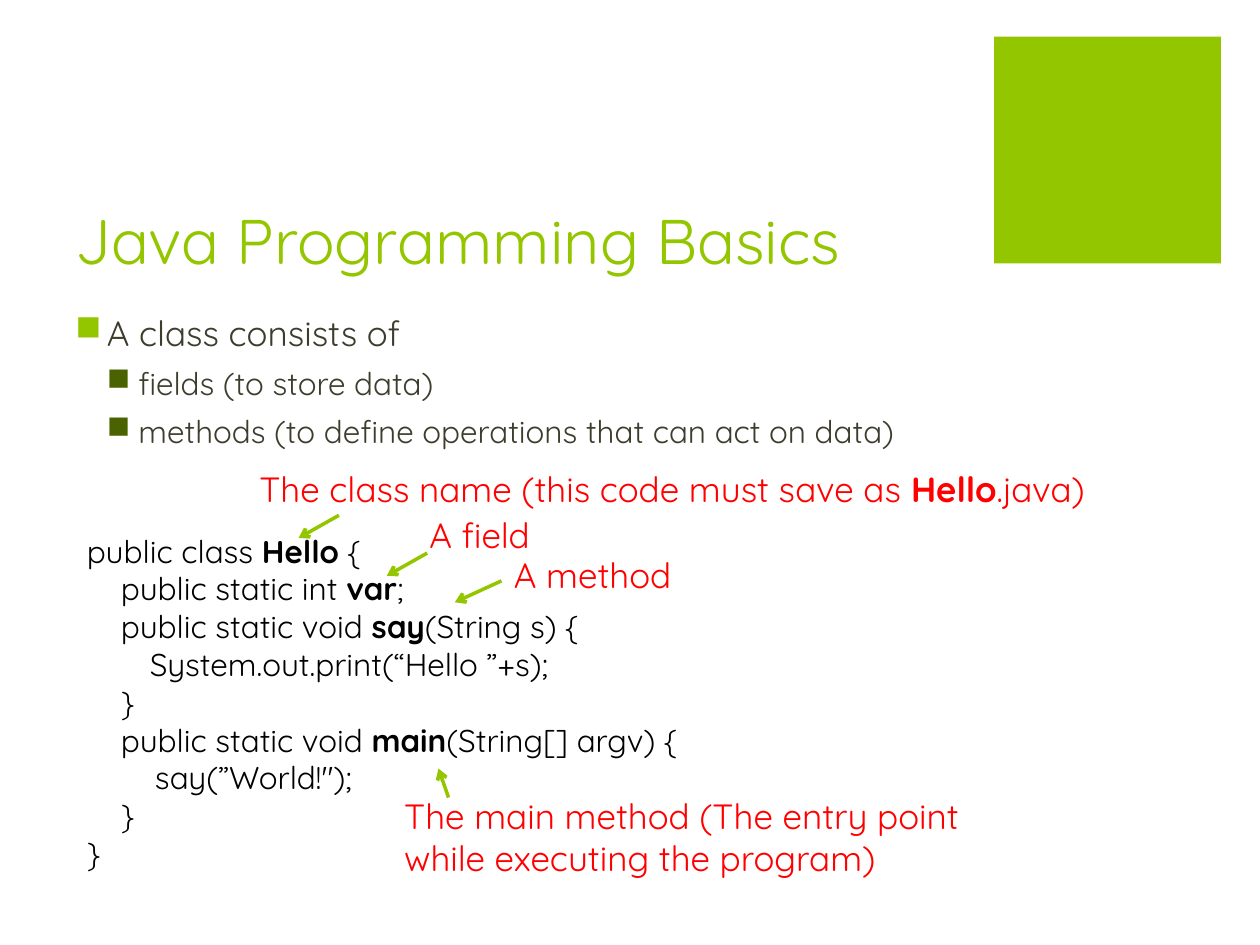
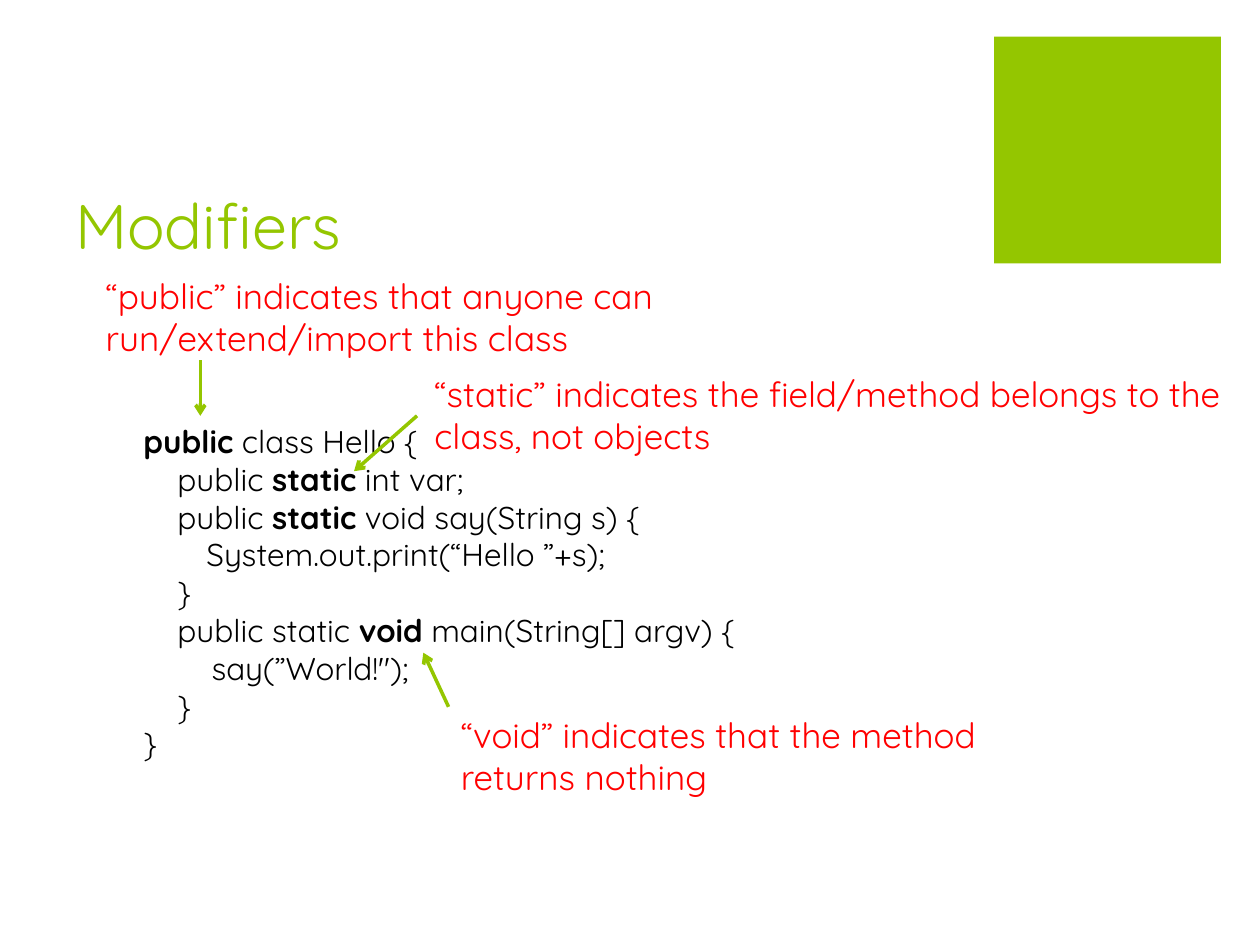
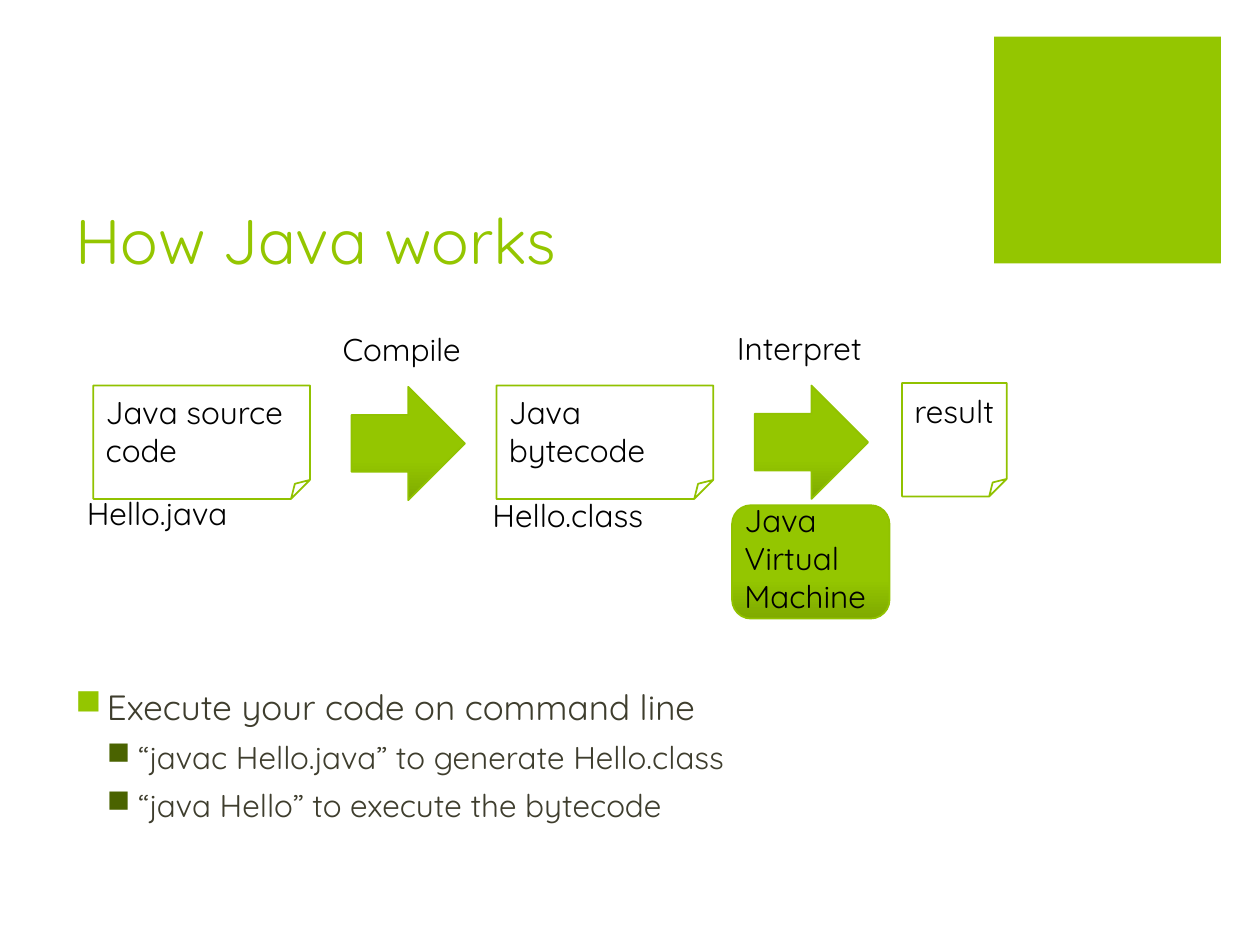
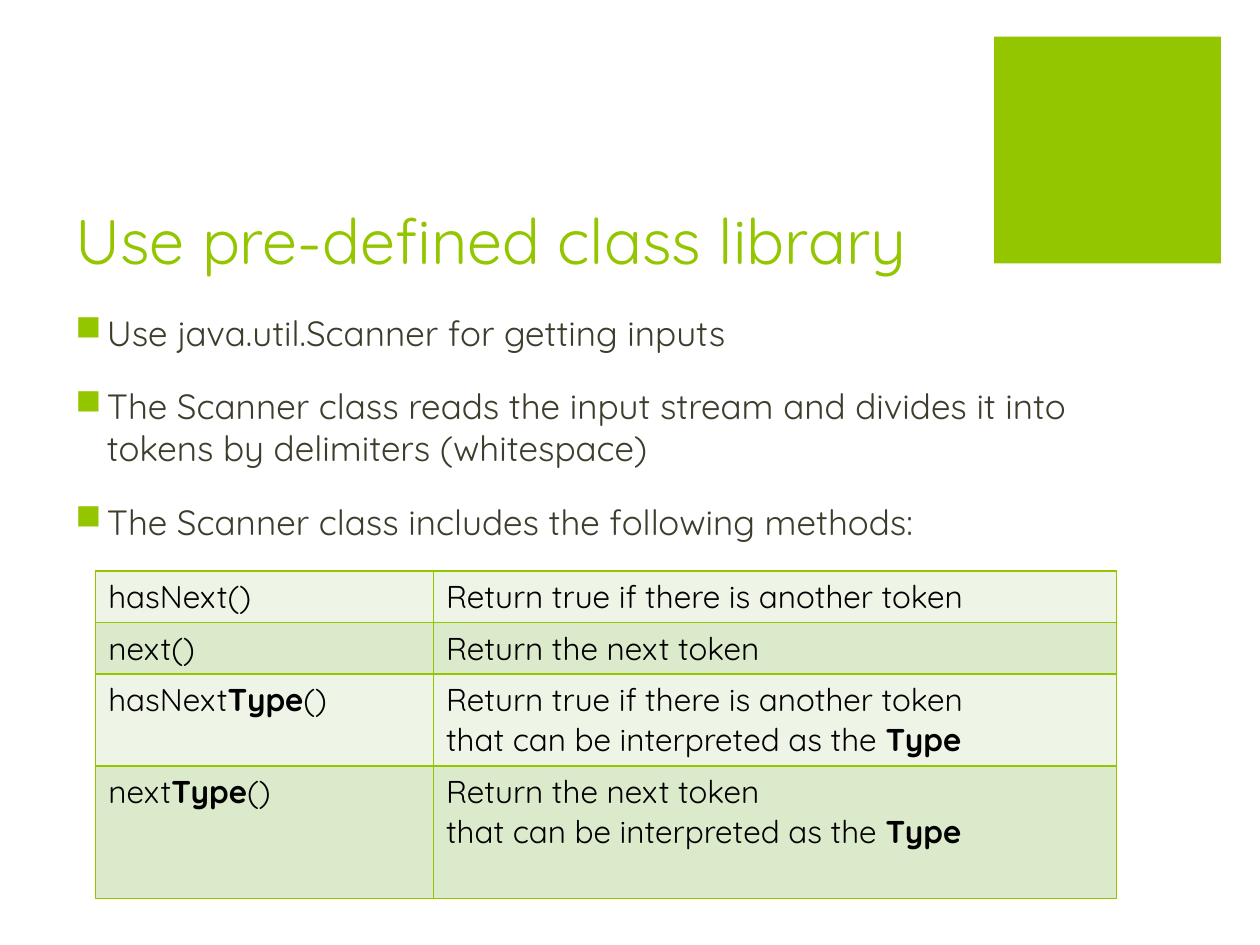
from dataclasses import dataclass

from lxml.etree import SubElement
from pptx import Presentation
from pptx.dml.color import RGBColor
from pptx.enum.shapes import MSO_CONNECTOR, MSO_SHAPE as Preset
from pptx.enum.text import MSO_ANCHOR as Anchor, MSO_AUTO_SIZE as AutoSize
from pptx.oxml.ns import qn
from pptx.util import Pt

PX = 9144  # EMU per px, 100 px to the inch
FONT = "Quicksand"
TITLE_SIZE, LARGE, NORMAL = 36, 20, 18

GREEN = RGBColor(0x94, 0xC6, 0x00)
EDGE_GREEN = RGBColor(0x91, 0xC2, 0x00)
SHADE_GREEN = RGBColor(0x7F, 0xAA, 0x00)
DARK_GREEN = RGBColor(0x4A, 0x63, 0x00)
BODY_GRAY = RGBColor(0x3E, 0x3D, 0x2D)
BLACK = RGBColor(0x00, 0x00, 0x00)
RED = RGBColor(0xFF, 0x00, 0x00)
ROW_FILLS = (RGBColor(0xEE, 0xF5, 0xE7), RGBColor(0xDC, 0xEA, 0xCC))


# Descriptions of the repeated elements
@dataclass(frozen=True)
class Box:
    left: int
    top: int
    width: int
    height: int

    def emu(self) -> tuple:
        return tuple(n * PX for n in (self.left, self.top, self.width, self.height))


@dataclass(frozen=True)
class Line:
    text: str
    bold: str = ""  # the word shown in bold
    indent: int = 0


@dataclass(frozen=True)
class BulletStyle:
    indent: int
    space_before: int
    size: int
    color: RGBColor


@dataclass(frozen=True)
class Bullet:
    text: str
    level: int = 0


@dataclass(frozen=True)
class Callout:
    text: str
    box: Box
    start: tuple
    end: tuple
    bold: str = ""


@dataclass(frozen=True)
class Figure:
    preset: Preset
    box: Box


SQUARE = Box(789, 29, 180, 180)
TITLE = Box(50, 100, 712, 125)
BULLET_STYLES = (BulletStyle(25, 18, LARGE, GREEN), BulletStyle(50, 6, NORMAL, DARK_GREEN))
HANGING = 25

CODE = (
    Line("public class Hello {"),
    Line("public static int var;", indent=27),
    Line("public static void say(String s) {", indent=27),
    Line("System.out.print(“Hello ”+s);", indent=50),
    Line("}", indent=27),
    Line("public static void main(String[] argv) {", indent=27),
    Line("say(”World!\");", indent=54),
    Line("}", indent=27),
    Line("}"),
)


# Text helpers
def set_font(paragraph, size: int, color: RGBColor) -> None:
    paragraph.font.name = FONT
    paragraph.font.size = Pt(size)
    paragraph.font.color.rgb = color


def add_runs(paragraph, line: Line) -> None:
    parts = line.text.partition(line.bold) if line.bold else (line.text,)
    for part in filter(None, parts):
        run = paragraph.add_run()
        run.text = part
        if part == line.bold:
            run.font.bold = True


def paragraphs_for(frame, items):
    """Pair each item with a paragraph of the frame."""
    for index, item in enumerate(items):
        yield (frame.add_paragraph() if index else frame.paragraphs[0]), item


def add_text(slide, box: Box, lines, size: int = NORMAL, color: RGBColor = BLACK,
             wrap: bool = True, anchor: Anchor = Anchor.TOP):
    frame = slide.shapes.add_textbox(*box.emu()).text_frame
    frame.word_wrap = wrap
    frame.vertical_anchor = anchor
    if not wrap:
        frame.auto_size = AutoSize.SHAPE_TO_FIT_TEXT
    for paragraph, line in paragraphs_for(frame, lines):
        if line.indent:
            paragraph._p.get_or_add_pPr().set("marL", str(line.indent * PX))
        set_font(paragraph, size, color)
        add_runs(paragraph, line)


def add_bullets(slide, box: Box, bullets) -> None:
    frame = slide.shapes.add_textbox(*box.emu()).text_frame
    frame.word_wrap = True
    for paragraph, bullet in paragraphs_for(frame, bullets):
        style = BULLET_STYLES[bullet.level]
        paragraph.level = bullet.level
        paragraph.space_before = Pt(style.space_before)
        properties = paragraph._p.get_or_add_pPr()
        properties.set("marL", str(style.indent * PX))
        properties.set("indent", str(-HANGING * PX))
        bullet_color = SubElement(properties, qn("a:buClr"))
        SubElement(bullet_color, qn("a:srgbClr"), val=str(style.color))
        SubElement(properties, qn("a:buChar"), char="■")
        set_font(paragraph, style.size, BODY_GRAY)
        add_runs(paragraph, Line(bullet.text))


def add_code(slide, left: int, top: int, bold_words: dict) -> None:
    lines = [Line(line.text, bold_words.get(number, ""), line.indent)
             for number, line in enumerate(CODE)]
    add_text(slide, Box(left, top, 628, 283), lines)


# Drawing helpers
def add_arrow(slide, start: tuple, end: tuple) -> None:
    points = [n * PX for n in (*start, *end)]
    arrow = slide.shapes.add_connector(MSO_CONNECTOR.STRAIGHT, *points)
    arrow.line.color.rgb = GREEN
    arrow.line.width = Pt(2)
    SubElement(arrow.line._get_or_add_ln(), qn("a:tailEnd"), type="arrow")
    SubElement(arrow._element.spPr, qn("a:effectLst"))


def add_callout(slide, callout: Callout) -> None:
    add_arrow(slide, callout.start, callout.end)
    add_text(slide, callout.box, [Line(callout.text, callout.bold)], LARGE, RED)


def add_figure(slide, figure: Figure) -> None:
    shape = slide.shapes.add_shape(figure.preset, *figure.box.emu())
    shape.shadow.inherit = False
    shape.line.color.rgb = EDGE_GREEN
    shape.line.width = Pt(1)
    if figure.preset == Preset.FOLDED_CORNER:
        shape.fill.background()
        return
    shape.fill.gradient()
    shape.fill.gradient_angle = 90  # from the bottom up
    stops = zip(shape.fill.gradient_stops, (SHADE_GREEN, GREEN), (0, 0.35))
    for stop, color, position in stops:
        stop.color.rgb = color
        stop.position = position


def add_borders(cell) -> None:
    properties = cell._tc.get_or_add_tcPr()
    for side in ("lnL", "lnR", "lnT", "lnB"):
        border = SubElement(properties, qn(f"a:{side}"), w=str(Pt(1)))
        fill = SubElement(border, qn("a:solidFill"))
        SubElement(fill, qn("a:srgbClr"), val=str(GREEN))


def add_method_table(slide, left: int, top: int, widths, heights, rows) -> None:
    box = Box(left, top, sum(widths), sum(heights))
    table = slide.shapes.add_table(len(rows), len(widths), *box.emu()).table
    table.first_row = table.horz_banding = False
    for column, width in zip(table.columns, widths):
        column.width = width * PX
    for number, (row, height, cells) in enumerate(zip(table.rows, heights, rows)):
        row.height = height * PX
        for cell, lines in zip(row.cells, cells):
            add_borders(cell)
            cell.fill.solid()
            cell.fill.fore_color.rgb = ROW_FILLS[number % 2]
            for paragraph, line in paragraphs_for(cell.text_frame, lines):
                set_font(paragraph, NORMAL, BLACK)
                add_runs(paragraph, line)


def add_slide(presentation, title: str, title_box: Box = TITLE):
    """A blank slide with the green square and the title."""
    slide = presentation.slides.add_slide(presentation.slide_layouts[6])
    square = slide.shapes.add_shape(Preset.RECTANGLE, *SQUARE.emu())
    square.shadow.inherit = False
    square.fill.solid()
    square.fill.fore_color.rgb = GREEN
    square.line.fill.background()
    add_text(slide, title_box, [Line(title)], TITLE_SIZE, GREEN, anchor=Anchor.BOTTOM)
    return slide


# Slides
def build_basics(presentation) -> None:
    slide = add_slide(presentation, "Java Programming Basics")
    add_bullets(slide, Box(50, 242, 756, 428), (
        Bullet("A class consists of"),
        Bullet("fields (to store data)", 1),
        Bullet("methods (to define operations that can act on data)", 1),
    ))
    add_code(slide, 59, 417, {0: "Hello", 1: "var", 2: "say", 5: "main"})
    for callout in (
        Callout("A field", Box(331, 403, 155, 44), (339, 439), (307, 457)),
        Callout("A method", Box(398, 434, 155, 44), (398, 461), (361, 478)),
        Callout("The main method (The entry point while executing the program)",
                Box(311, 626, 520, 77), (356, 633), (348, 610)),
        Callout("The class name (this code must save as Hello.java)",
                Box(196, 366, 785, 44), (269, 409), (237, 427), bold="Hello"),
    ):
        add_callout(slide, callout)


def build_modifiers(presentation) -> None:
    slide = add_slide(presentation, "Modifiers", Box(50, 88, 712, 125))
    add_code(slide, 104, 330, {0: "public", 1: "static", 2: "static", 5: "void"})
    for callout in (
        Callout("“public” indicates that anyone can run/extend/import this class",
                Box(74, 213, 574, 77), (159, 286), (159, 330)),
        Callout("“static” indicates the field/method belongs to the class, not objects",
                Box(335, 291, 670, 77), (331, 330), (281, 374)),
        Callout("“void” indicates that the method returns nothing",
                Box(356, 561, 526, 77), (356, 561), (336, 518)),
    ):
        add_callout(slide, callout)


def build_workflow(presentation) -> None:
    slide = add_slide(presentation, "How Java works")
    add_bullets(slide, Box(50, 539, 712, 197), (
        Bullet("Execute your code on command line"),
        Bullet("“javac Hello.java” to generate Hello.class", 1),
        Bullet("“java Hello” to execute the bytecode", 1),
    ))
    for figure in (
        Figure(Preset.FOLDED_CORNER, Box(74, 306, 172, 90)),
        Figure(Preset.RIGHT_ARROW, Box(279, 307, 90, 90)),
        Figure(Preset.FOLDED_CORNER, Box(394, 306, 172, 90)),
        Figure(Preset.RIGHT_ARROW, Box(599, 306, 90, 90)),
        Figure(Preset.ROUNDED_RECTANGLE, Box(581, 401, 125, 90)),
        Figure(Preset.FOLDED_CORNER, Box(716, 304, 83, 90)),
    ):
        add_figure(slide, figure)
    for box, *texts in (
        (Box(74, 307, 170, 71), "Java source", "code"),
        (Box(262, 257, 125, 40), "Compile"),
        (Box(394, 307, 142, 71), "Java", "bytecode"),
        (Box(716, 306, 83, 40), "result"),
        (Box(59, 387, 141, 40), "Hello.java"),
        (Box(381, 389, 146, 40), "Hello.class"),
        (Box(575, 256, 124, 40), "Interpret"),
    ):
        add_text(slide, box, [Line(text) for text in texts], wrap=False)
    add_text(slide, Box(581, 393, 141, 101), [Line("Java Virtual Machine")])


def build_library(presentation) -> None:
    slide = add_slide(presentation, "Use pre-defined class library")
    add_bullets(slide, Box(50, 242, 883, 428), (
        Bullet("Use java.util.Scanner for getting inputs"),
        Bullet("The Scanner class reads the input stream and divides it into "
               "tokens by delimiters (whitespace)"),
        Bullet("The Scanner class includes the following methods:"),
    ))
    another = Line("Return true if there is another token")
    following = Line("Return the next token")
    as_type = Line("that can be interpreted as the Type", "Type")
    add_method_table(slide, 76, 453, (268, 542), (41, 41, 73, 105), (
        ([Line("hasNext()")], [another]),
        ([Line("next()")], [following]),
        ([Line("hasNextType()", "Type")], [another, as_type]),
        ([Line("nextType()", "Type")], [following, as_type]),
    ))


def main() -> None:
    presentation = Presentation()
    presentation.slide_width = 1000 * PX
    presentation.slide_height = 750 * PX
    build_basics(presentation)
    build_modifiers(presentation)
    build_workflow(presentation)
    build_library(presentation)
    presentation.save("out.pptx")


if __name__ == "__main__":
    main()
